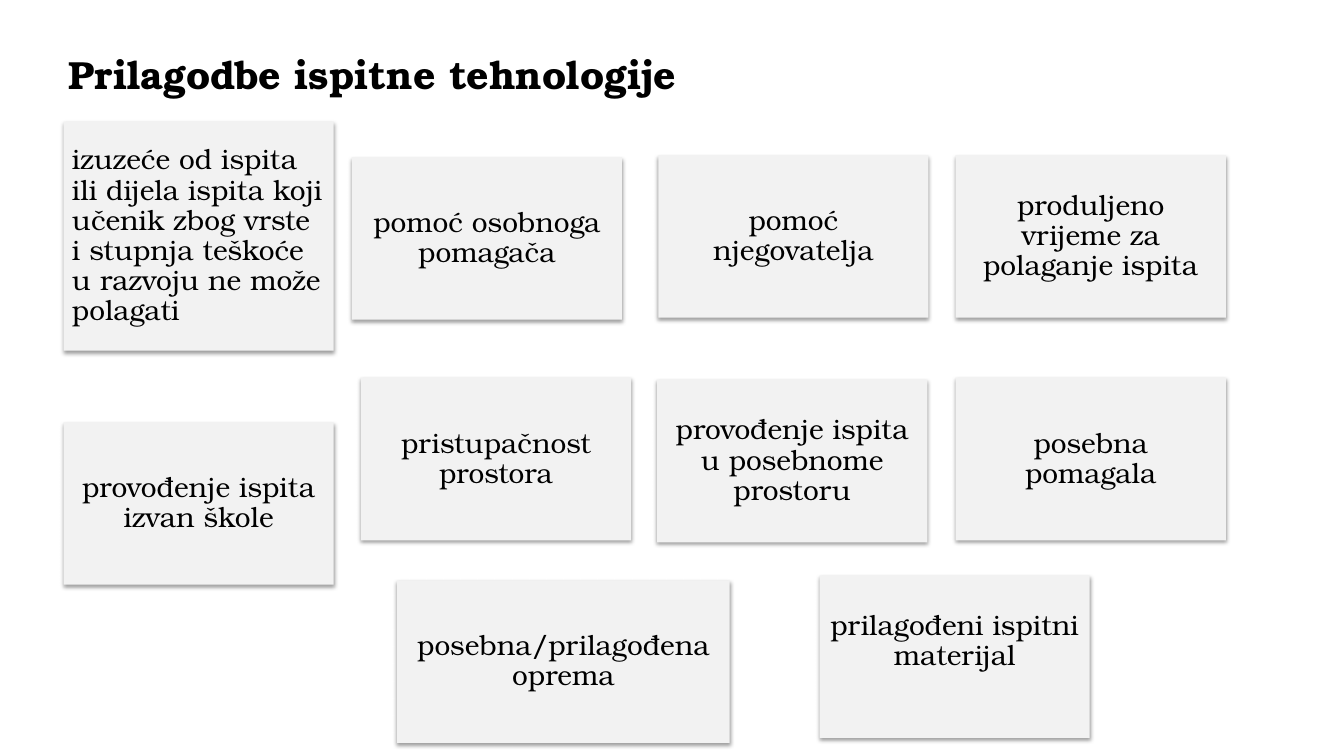
from lxml import etree
from pptx import Presentation
from pptx.dml.color import RGBColor
from pptx.enum import shapes, text
from pptx.oxml import ns
from pptx.util import Pt

FONT = "TeX Gyre Bonum"
BLACK = "000000"
CARD_FILL = "F2F2F2"
CARD_W, CARD_H = 193, 116
INSET = 6
LINE_H = 21.6

CARDS = [
    ("izuzeće od ispita ili dijela ispita koji učenik zbog vrste i stupnja teškoće "
     "u razvoju ne može polagati", 45.4, 87.1, {"h": 163.4, "align": "LEFT"}),
    ("pomoć osobnoga pomagača", 251.3, 112.3, {}),
    ("pomoć njegovatelja", 470.2, 110.9, {}),
    ("produljeno vrijeme za polaganje ispita", 682.6, 110.9, {}),
    ("provođenje ispita izvan škole", 45.4, 301.7, {}),
    ("pristupačnost prostora", 257.8, 270, {}),
    ("provođenje ispita u posebnome prostoru", 469.4, 271.4, {}),
    ("posebna pomagala", 682.6, 270, {}),
    ("posebna/prilagođena oprema", 283.7, 414.7, {"w": 237.6}),
    ("prilagođeni ispitni materijal", 585.4, 411.1, {"bottom": INSET + LINE_H}),
]


def color(value):
    return RGBColor.from_string(value)


def write(tf, words, size=20, bold=False, align="CENTER", inset=0, bottom=None):
    tf.word_wrap = True
    tf.auto_size = text.MSO_AUTO_SIZE.NONE
    tf.vertical_anchor = text.MSO_ANCHOR.MIDDLE
    tf.margin_left = tf.margin_right = tf.margin_top = Pt(inset)
    tf.margin_bottom = Pt(inset if bottom is None else bottom)
    p = tf.paragraphs[0]
    p.alignment = text.PP_ALIGN[align]
    p.line_spacing = 0.9
    r = p.add_run()
    r.text = words
    r.font.name = FONT
    r.font.size = Pt(size)
    r.font.bold = bold
    r.font.color.rgb = color(BLACK)


def add_shadow(sp):
    sp.shadow.inherit = False
    effects = sp._element.spPr.find(ns.qn("a:effectLst"))
    shadow = etree.SubElement(effects, ns.qn("a:outerShdw"), blurRad=str(Pt(3.1)),
                              dist=str(Pt(1.6)), dir="5400000", rotWithShape="0")
    tint = etree.SubElement(shadow, ns.qn("a:srgbClr"), val=BLACK)
    etree.SubElement(tint, ns.qn("a:alpha"), val="38000")


def place_title(s, words, x, y, w, h):
    sp = s.shapes.title
    sp.left, sp.top, sp.width, sp.height = Pt(x), Pt(y), Pt(w), Pt(h)
    write(sp.text_frame, words, size=28, bold=True, align="LEFT")


def add_card(s, words, x, y, w=CARD_W, h=CARD_H, **fmt):
    sp = s.shapes.add_shape(shapes.MSO_SHAPE.RECTANGLE, Pt(x), Pt(y), Pt(w), Pt(h))
    sp.fill.solid()
    sp.fill.fore_color.rgb = color(CARD_FILL)
    sp.line.fill.background()
    add_shadow(sp)
    write(sp.text_frame, words, inset=INSET, **fmt)


def main():
    prs = Presentation()
    prs.slide_width, prs.slide_height = Pt(960), Pt(540)
    s = prs.slides.add_slide(prs.slide_layouts[5])
    place_title(s, "Prilagodbe ispitne tehnologije", 49, 36, 827.3, 37.4)
    for words, x, y, fmt in CARDS:
        add_card(s, words, x, y, **fmt)
    prs.save("out.pptx")


if __name__ == "__main__":
    main()
